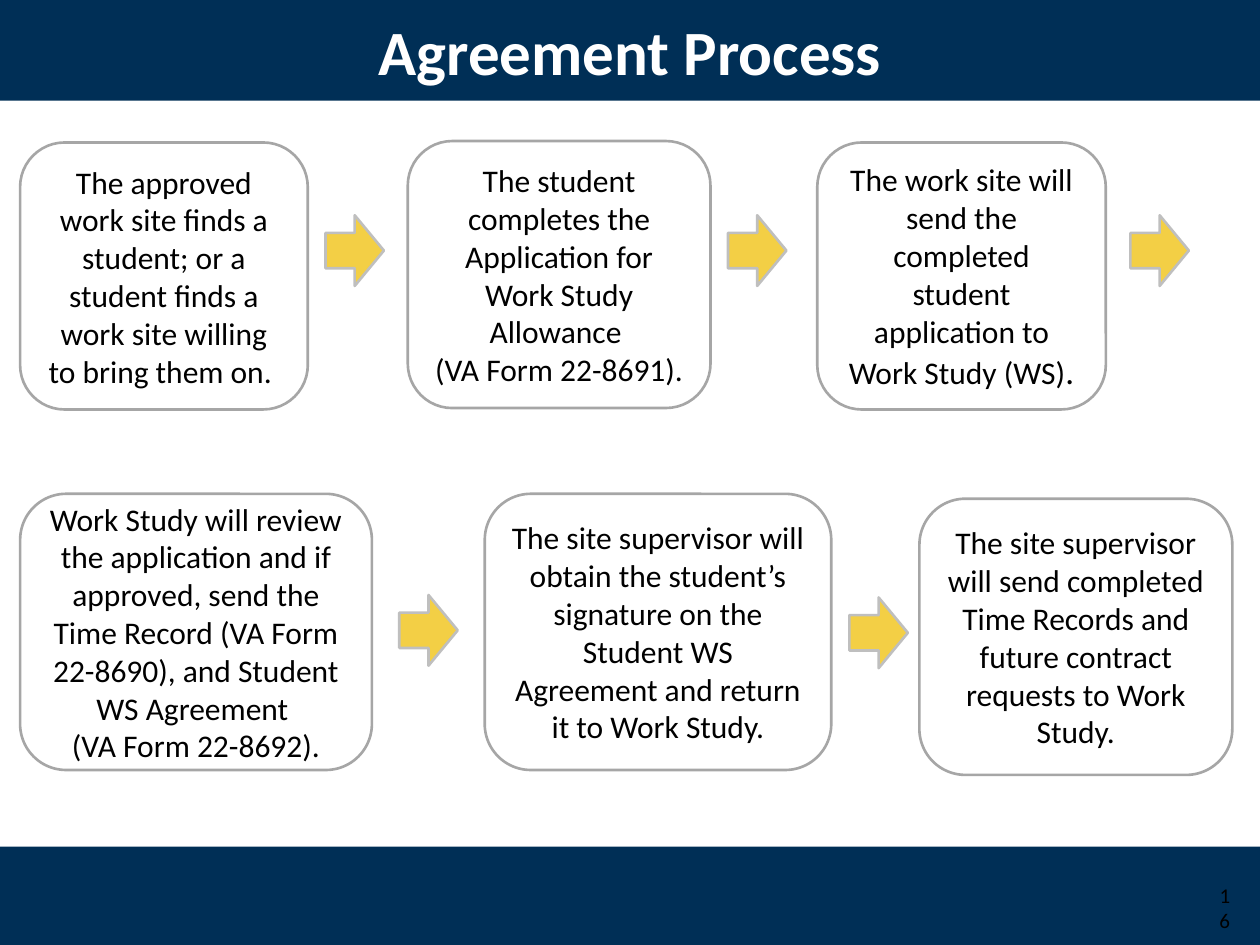
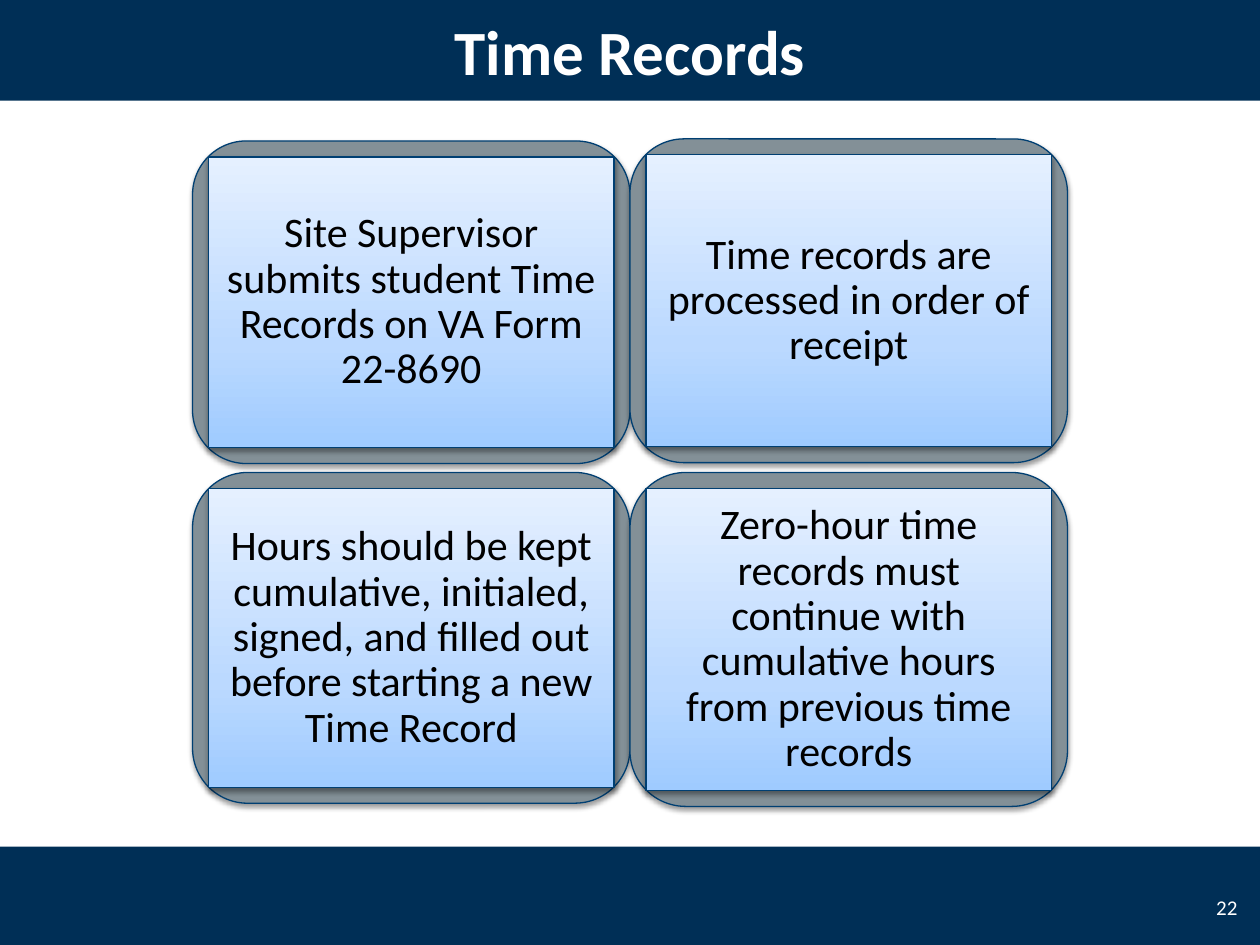
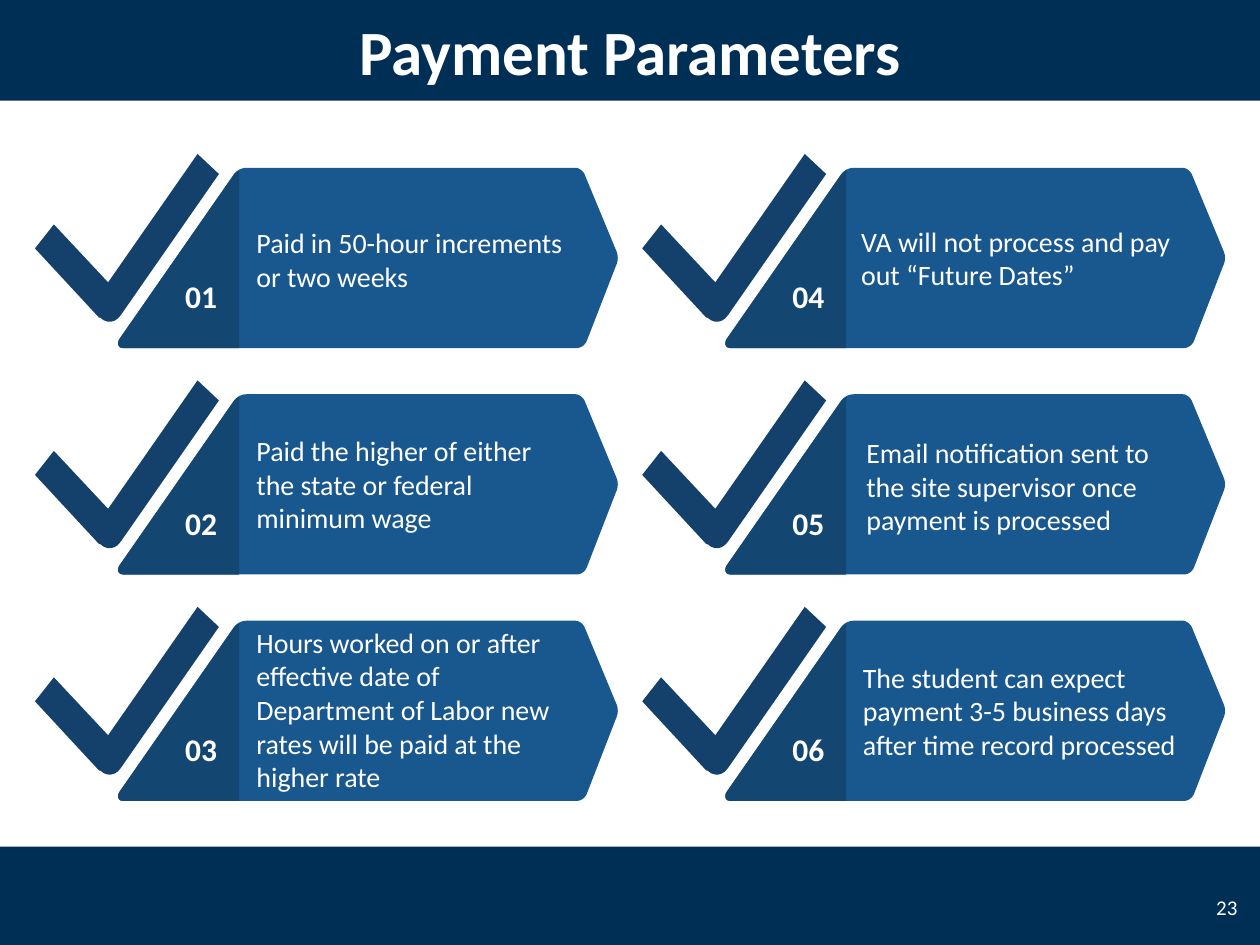
from dataclasses import dataclass

from lxml.etree import SubElement
from pptx import Presentation
from pptx.dml.color import RGBColor
from pptx.enum.shapes import MSO_SHAPE as Preset
from pptx.enum.text import MSO_ANCHOR as Anchor, PP_ALIGN as Align
from pptx.oxml import parse_xml
from pptx.oxml.ns import nsdecls, qn
from pptx.util import Pt


@dataclass(frozen=True)
class Theme:
    font: str = "Calibri"
    navy: str = "002F56"
    white: str = "FFFFFF"
    black: str = "000000"
    step_line: str = "A6A6A6"
    arrow: str = "F3CF45"
    arrow_line: str = "BFBFBF"
    tile_frame: str = "839097"
    tile_line: str = "003F72"
    tile_gradient: tuple = ((0, "9FCBFF"), (35, "BBD9FF"), (100, "E5F0FF"))
    check: str = "13416B"
    banner: str = "19578F"
    flap: str = "144672"
    title_size: float = 36
    tile_size: float = 24
    period_size: float = 20
    body_size: float = 18
    card_size: float = 16
    number_size: float = 12


THEME = Theme()
SLIDE_WIDTH, SLIDE_HEIGHT = 720, 540
BAND_HEIGHT = 57.6
FOOTER_TOP = 483.8

# Each step: box (left, top, width, height) and its paragraphs of (text, size) runs
BODY = THEME.body_size
STEPS = [
    ((11.5, 81.4, 164.4, 152.6), [[(
        "The approved work site finds a student; or a student finds a work site "
        "willing to bring them on. ", BODY)]]),
    ((233, 80.6, 173, 152.6), [
        [("The student completes the Application for Work Study Allowance ", BODY)],
        [("(VA Form 22-8691).", BODY)]]),
    ((467, 81.4, 164.9, 152.6), [[
        ("The work site will send the completed student application to "
         "Work Study (WS)", BODY),
        (".", THEME.period_size)]]),
    ((11.5, 282.2, 201, 157.8), [
        [("Work Study will review the application and if approved, send the Time "
          "Record (VA Form 22-8690), and Student WS Agreement ", BODY)],
        [("(VA Form 22-8692).", BODY)]]),
    ((277, 282.2, 198, 157.8), [[(
        "The site supervisor will obtain the student’s signature on the Student WS "
        "Agreement and return it to Work Study.", BODY)]]),
    ((525.4, 285, 178.8, 157.8), [[(
        "The site supervisor will send completed Time Records and future contract "
        "requests to Work Study.", BODY)]]),
]
ARROW_SPOTS = [(186 + 230 * column, 123) for column in range(3)]
ARROW_SPOTS += [(228.2, 340), (485.4, 341.4)]

TILES = [
    ((110, 80.6, 250, 184.3),
     "Site Supervisor submits student Time Records on VA Form 22-8690"),
    ((360, 79.4, 250, 185),
     "Time records are processed in order of receipt"),
    ((110, 270, 250, 189),
     "Hours should be kept cumulative, initialed, signed, and filled out before "
     "starting a new Time Record"),
    ((360, 270, 250, 190.8),
     "Zero-hour time records must continue with cumulative hours from previous "
     "time records"),
]

# Each card: its text, then left, top and height of the text inside the card
CARDS = [
    ("Paid in 50-hour increments or two weeks", 119.5, 37.4, 47.5),
    ("Paid the higher of either the state or federal minimum wage", 119.5, 26.8, 65.5),
    ("Hours worked on or after effective date of Department of Labor new rates "
     "will be paid at the higher rate", 119.5, 7, 119.5),
    ("VA will not process and pay out “Future Dates”", 118, 36.5, 46),
    ("Email notification sent to the site supervisor once payment is processed",
     121, 28, 65.5),
    ("The student can expect payment 3-5 business days after time record processed",
     119, 27, 65.5),
]
CARD_ROWS = 3
CARD_ORIGIN = (20, 88)
CARD_PITCH = (347, 129.4)

# Outlines inside a card: a pair is a corner, a triple of pairs is a Bézier curve
CHECK = [(10.8, 40.3), (41.8, 73.4), (92.9, 0), (105.1, 11.5), (49, 92.2),
         ((46.1, 96.5), (41, 97.2), (37.4, 93.6)), (36.7, 93.6), (0, 54)]
LOWER_CORNER = [(48.2, 105.8), ((47, 107.6), (47, 110.9), (50.4, 110.9))]
BANNER = [(113.8, 11.5), *LOWER_CORNER, (309.6, 110.9),
          ((311.8, 110.9), (314.4, 109.4), (315.4, 106.6)), (331.9, 64.1),
          ((333.4, 61.2), (333.4, 57.6), (331.9, 54.7)), (314.6, 13),
          ((313.9, 10.1), (311, 7.9), (308.9, 7.9)), (121, 7.9),
          ((118.1, 7.9), (115.2, 9.4), (113.8, 11.5))]
FLAP = [(116.6, 9.4), (113.8, 11.5), *LOWER_CORNER, (116.6, 110.9)]


def points(*lengths):
    return [Pt(length) for length in lengths]


def style(shape, fill=None, line=None, weight=1.5):
    """Set fill and outline, and drop the inherited shadow."""
    shape.shadow.inherit = False
    if fill:
        shape.fill.solid()
        shape.fill.fore_color.rgb = RGBColor.from_string(fill)
    if line:
        shape.line.color.rgb = RGBColor.from_string(line)
        shape.line.width = Pt(weight)
    else:
        shape.line.fill.background()


def write_text(shape, paragraphs, color, align=Align.CENTER, bold=False,
               anchor=Anchor.MIDDLE):
    frame = shape.text_frame
    frame.word_wrap = True
    frame.vertical_anchor = anchor
    for index, runs in enumerate(paragraphs):
        paragraph = frame.add_paragraph() if index else frame.paragraphs[0]
        paragraph.alignment = align
        for text, size in runs:
            run = paragraph.add_run()
            run.text = text
            run.font.name = THEME.font
            run.font.size = Pt(size)
            run.font.bold = bold
            run.font.color.rgb = RGBColor.from_string(color)


def add_preset(shapes, preset, box, **look):
    shape = shapes.add_shape(preset, *points(*box))
    style(shape, **look)
    return shape


def add_label(shapes, box, text, size, color, **layout):
    label = shapes.add_textbox(*points(*box))
    write_text(label, [[(text, size)]], color, **layout)


def add_layout_bands(slide):
    """Draw the two bands and hand them to the slide's layout, behind its title."""
    first_placeholder = slide.slide_layout.placeholders[0]
    for top in (FOOTER_TOP, 0):
        band = add_preset(slide.shapes, Preset.RECTANGLE,
                          (0, top, SLIDE_WIDTH, BAND_HEIGHT), fill=THEME.navy)
        first_placeholder._element.addprevious(band._element)


def add_title_slide(presentation, heading, number, number_box, number_color):
    slide = presentation.slides.add_slide(presentation.slide_layouts[5])
    title = slide.shapes.title
    title.left, title.top, title.width, title.height = points(36, 0, 648, BAND_HEIGHT)
    write_text(title, [[(heading, THEME.title_size)]], THEME.white, bold=True)
    add_label(slide.shapes, number_box, number, THEME.number_size, number_color,
              align=Align.RIGHT)
    return slide


def add_process(slide):
    for box, paragraphs in STEPS:
        step = add_preset(slide.shapes, Preset.ROUNDED_RECTANGLE, box,
                          fill=THEME.white, line=THEME.step_line)
        write_text(step, paragraphs, THEME.black)
    for left, top in ARROW_SPOTS:
        add_preset(slide.shapes, Preset.RIGHT_ARROW, (left, top, 33.4, 40.4),
                   fill=THEME.arrow, line=THEME.arrow_line)


def add_drop_shadow(shape):
    effects = shape._element.spPr.find(qn("a:effectLst"))
    shadow = SubElement(effects, qn("a:outerShdw"), blurRad=str(Pt(3.1)),
                        dist=str(Pt(1.6)), dir="5400000", rotWithShape="0")
    color = SubElement(shadow, qn("a:srgbClr"), val=THEME.black)
    SubElement(color, qn("a:alpha"), val="38000")


def fill_gradient(shape):
    """Fill upward, from the first stop at the bottom edge."""
    stops = "".join(
        f'<a:gs pos="{position * 1000}"><a:srgbClr val="{color}"/></a:gs>'
        for position, color in THEME.tile_gradient)
    gradient = parse_xml(
        f'<a:gradFill {nsdecls("a")} rotWithShape="1"><a:gsLst>{stops}</a:gsLst>'
        '<a:lin ang="16200000" scaled="0"/></a:gradFill>')
    shape._element.spPr.find(qn("a:prstGeom")).addnext(gradient)


def add_tile(slide, box, text):
    left, top, width, height = box
    inset = 9.1
    inner = (left + inset, top + inset, width - 2 * inset, height - 2 * inset)
    frame = add_preset(slide.shapes, Preset.ROUNDED_RECTANGLE, box,
                       fill=THEME.tile_frame, line=THEME.tile_line, weight=0.75)
    panel = add_preset(slide.shapes, Preset.RECTANGLE, inner,
                       line=THEME.tile_line, weight=0.75)
    fill_gradient(panel)
    for shape in (frame, panel):
        add_drop_shadow(shape)
    write_text(panel, [[(text, THEME.tile_size)]], THEME.black)
    panel.text_frame.margin_top = panel.text_frame.margin_bottom = Pt(7.2)
    panel.text_frame.paragraphs[0].line_spacing = 0.9


def flatten(outline, steps=6):
    """Turn the corners and curves of an outline into plain points."""
    flat = []
    for part in outline:
        if len(part) == 2:
            flat.append(part)
            continue
        curve = (flat[-1], *part)
        for step in range(1, steps + 1):
            t = step / steps
            weights = ((1 - t) ** 3, 3 * t * (1 - t) ** 2, 3 * t * t * (1 - t), t ** 3)
            flat.append(tuple(sum(weight * point[axis]
                                  for weight, point in zip(weights, curve))
                              for axis in (0, 1)))
    return flat


def add_outline(shapes, left, top, outline, fill):
    start, *rest = [points(left + x, top + y) for x, y in flatten(outline)]
    builder = shapes.build_freeform(*start)
    builder.add_line_segments(rest, close=True)
    style(builder.convert_to_shape(), fill=fill)


def add_card(slide, left, top, number, text, text_left, text_top, text_height):
    shapes = slide.shapes.add_group_shape().shapes
    add_outline(shapes, left, top, CHECK, THEME.check)
    add_outline(shapes, left, top, BANNER, THEME.banner)
    add_label(shapes, (left + text_left, top + text_top, 196.6, text_height), text,
              THEME.card_size, THEME.white, align=Align.LEFT, anchor=Anchor.TOP)
    add_outline(shapes, left, top, FLAP, THEME.flap)
    add_label(shapes, (left + 77, top + 67, 36, 34), f"{number:02}",
              THEME.body_size, THEME.white, bold=True, anchor=Anchor.TOP)


def add_cards(slide):
    for index, card in enumerate(CARDS):
        column, row = divmod(index, CARD_ROWS)
        left = CARD_ORIGIN[0] + column * CARD_PITCH[0]
        top = CARD_ORIGIN[1] + row * CARD_PITCH[1]
        add_card(slide, left, top, index + 1, *card)


def main():
    presentation = Presentation()
    presentation.slide_width, presentation.slide_height = points(
        SLIDE_WIDTH, SLIDE_HEIGHT)
    number_box = (684, 504, 30.2, 28.8)

    process = add_title_slide(presentation, "Agreement Process", "16",
                              (684, 504.7, 26, 28), THEME.black)
    add_layout_bands(process)
    add_process(process)

    records = add_title_slide(presentation, "Time Records", "22",
                              number_box, THEME.white)
    for box, text in TILES:
        add_tile(records, box, text)

    payment = add_title_slide(presentation, "Payment Parameters", "23",
                              number_box, THEME.white)
    add_cards(payment)
    presentation.save("out.pptx")


if __name__ == "__main__":
    main()
